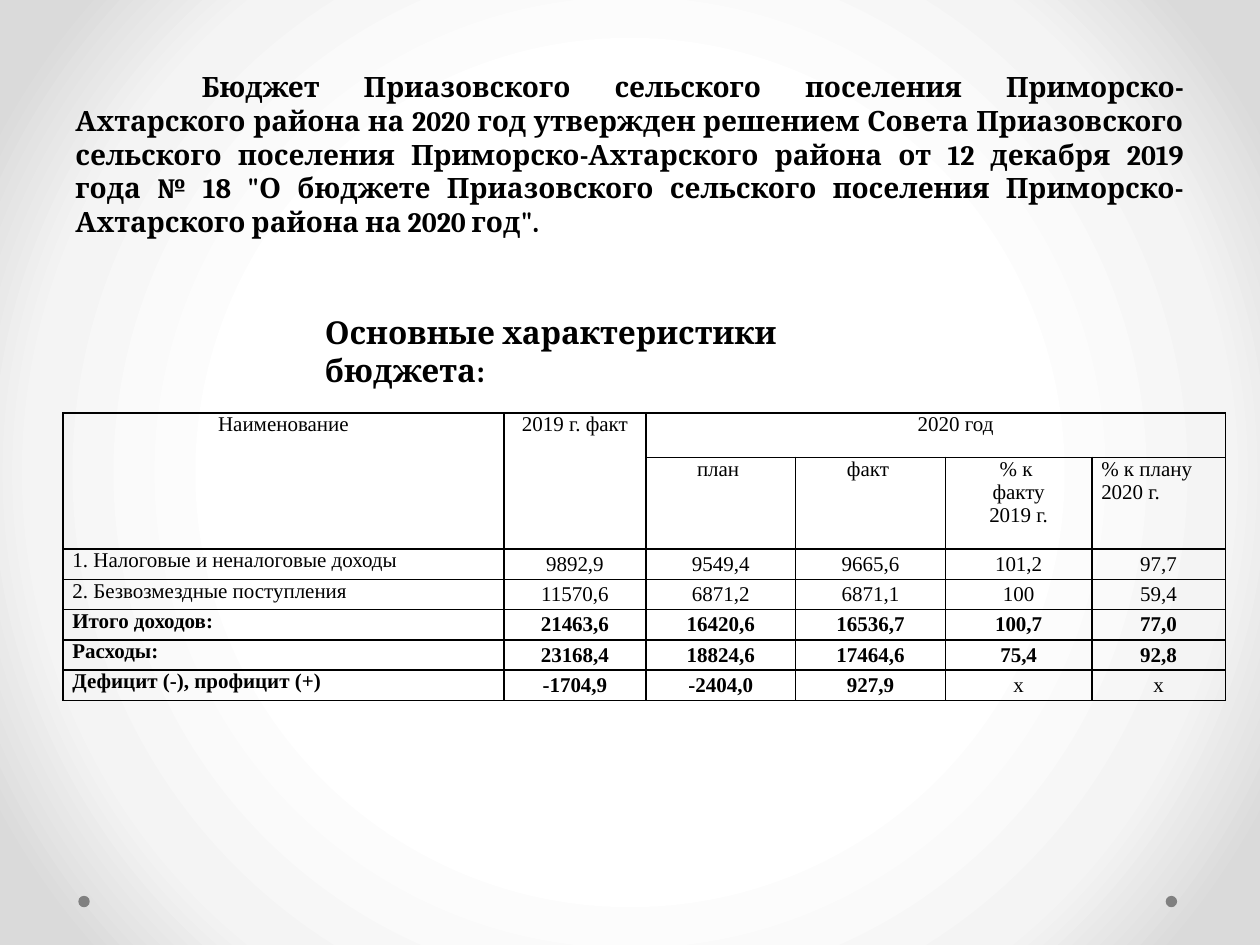
import pptx
import pptx.dml.color
import pptx.enum.shapes
import pptx.enum.text
import pptx.oxml
import pptx.oxml.ns
import pptx.util

Cm, Pt = pptx.util.Cm, pptx.util.Pt
RGBColor = pptx.dml.color.RGBColor
ALIGN = pptx.enum.text.PP_ALIGN
ANCHOR = pptx.enum.text.MSO_ANCHOR

BLACK = RGBColor(0x00, 0x00, 0x00)
GRAY = RGBColor(0x80, 0x80, 0x80)
BACKGROUND_STOPS = [
    (50, RGBColor(0xFF, 0xFF, 0xFF)),
    (76, RGBColor(0xF4, 0xF4, 0xF4)),
    (92, RGBColor(0xDA, 0xDA, 0xDA)),
]

TITLE = (
    "Бюджет Приазовского сельского поселения Приморско-Ахтарского района "
    "на 2020 год утвержден решением Совета Приазовского сельского поселения "
    "Приморско-Ахтарского района от 12 декабря 2019 года № 18 \"О бюджете "
    "Приазовского сельского поселения Приморско-Ахтарского района на 2020 год\"."
)
HEADING = "Основные характеристики бюджета:"
COLUMNS = [8.89, 2.86, 3.02, 3.02, 2.95, 2.69]
ROWS = [0.89, 1.85] + [0.61] * 5
TOP_HEADERS = ["Наименование", "2019 г. факт", "2020 год"]
SUB_HEADERS = [["план "], ["факт "], ["% к ", "факту", "2019 г."], ["% к плану", "2020 г."]]
BODY = [
    ["1. Налоговые и неналоговые доходы", "9892,9", "9549,4", "9665,6", "101,2", "97,7"],
    ["2. Безвозмездные поступления", "11570,6", "6871,2", "6871,1", "100", "59,4"],
    ["Итого доходов:", "21463,6", "16420,6", "16536,7", "100,7", "77,0"],
    ["Расходы:", "23168,4", "18824,6", "17464,6", "75,4", "92,8"],
    ["Дефицит (-), профицит (+)", "-1704,9", "-2404,0", "927,9", "х", "х"],
]
FIRST_TOTAL = 2


def add_run(p, text, font, size, bold=False):
    """Append a black run to a paragraph."""
    r = p.add_run()
    r.text = text
    r.font.name = font
    r.font.size = Pt(size)
    r.font.bold = bold
    r.font.color.rgb = BLACK


def set_background(s):
    """Fill the slide with a circular gradient from the centre."""
    stops = "".join(
        f'<a:gs pos="{pos * 1000}"><a:srgbClr val="{color}"/></a:gs>'
        for pos, color in BACKGROUND_STOPS
    )
    bg = pptx.oxml.parse_xml(
        f'<p:bg {pptx.oxml.ns.nsdecls("p", "a")}><p:bgPr><a:gradFill>'
        f'<a:gsLst>{stops}</a:gsLst><a:path path="circle">'
        '<a:fillToRect l="50000" t="50000" r="50000" b="50000"/></a:path>'
        "</a:gradFill><a:effectLst/></p:bgPr></p:bg>"
    )
    s.element.cSld.insert(0, bg)


def add_corner_dots(s, left, top, width, size):
    """Place a dot at each end of the given strip."""
    for x in (left, left + width - size):
        sp = s.shapes.add_shape(
            pptx.enum.shapes.MSO_SHAPE.OVAL, Cm(x), Cm(top), Cm(size), Cm(size)
        )
        sp.shadow.inherit = False
        sp.fill.solid()
        sp.fill.fore_color.rgb = GRAY
        sp.line.fill.background()


def add_text(s, left, top, width, height, text, size, align, anchor, indent=0):
    """Add a wrapped bold Cambria paragraph with a first-line indent."""
    sp = s.shapes.add_textbox(Cm(left), Cm(top), Cm(width), Cm(height))
    tf = sp.text_frame
    tf.word_wrap = True
    tf.vertical_anchor = anchor
    p = tf.paragraphs[0]
    p.alignment = align
    p._p.get_or_add_pPr().set("indent", str(Cm(indent)))
    add_run(p, text, "Cambria", size, True)


def set_borders(cell):
    """Draw thin black lines on all sides of a cell."""
    tc_pr = cell._tc.get_or_add_tcPr()
    for i, side in enumerate("LRTB"):
        tc_pr.insert(i, pptx.oxml.parse_xml(
            f'<a:ln{side} {pptx.oxml.ns.nsdecls("a")} w="{Pt(1)}"><a:solidFill>'
            f'<a:srgbClr val="{BLACK}"/></a:solidFill></a:ln{side}>'
        ))


def fill_cell(cell, lines, align, anchor=ANCHOR.TOP, bold=False):
    """Write one paragraph per line into a cell."""
    cell.vertical_anchor = anchor
    tf = cell.text_frame
    for i, line in enumerate(lines):
        p = tf.add_paragraph() if i else tf.paragraphs[0]
        p.alignment = align
        add_run(p, line, "Times New Roman", 12, bold)


def add_budget_table(s, left, top):
    """Add the budget table with its two-level header."""
    table = s.shapes.add_table(
        len(ROWS), len(COLUMNS), Cm(left), Cm(top), Cm(sum(COLUMNS)), Cm(sum(ROWS))
    ).table
    table.first_row = table.horz_banding = False
    for column, width in zip(table.columns, COLUMNS):
        column.width = Cm(width)
    for row, height in zip(table.rows, ROWS):
        row.height = Cm(height)
    for cell in table.iter_cells():
        cell.margin_left = cell.margin_right = Cm(0.19)
        cell.margin_top = cell.margin_bottom = 0
        cell.fill.background()
        set_borders(cell)

    for c, text in enumerate(TOP_HEADERS):
        cell = table.cell(0, c)
        cell.merge(table.cell(1, c) if c < 2 else table.cell(0, len(COLUMNS) - 1))
        fill_cell(cell, [text], ALIGN.CENTER)
    p_pr = table.cell(0, 2).text_frame.paragraphs[0]._p.get_or_add_pPr()
    p_pr.set("marL", str(Cm(0.81)))
    for c, lines in enumerate(SUB_HEADERS, 2):
        last = c == len(COLUMNS) - 1
        fill_cell(table.cell(1, c), lines, ALIGN.LEFT if last else ALIGN.CENTER)

    for i, (name, *values) in enumerate(BODY):
        bold = i >= FIRST_TOTAL
        align = ALIGN.JUSTIFY if i == len(BODY) - 1 else ALIGN.LEFT
        fill_cell(table.cell(i + 2, 0), [name], align, bold=bold)
        for c, value in enumerate(values, 1):
            fill_cell(table.cell(i + 2, c), [value], ALIGN.CENTER, ANCHOR.MIDDLE,
                      bold and value != "х")


def main():
    """Build and save the budget slide."""
    prs = pptx.Presentation()
    prs.slide_width, prs.slide_height = Cm(25.4), Cm(19.05)
    s = prs.slides.add_slide(prs.slide_layouts[6])
    set_background(s)
    add_corner_dots(s, 1.58, 18.06, 22.15, 0.23)
    add_text(s, 1.27, 0, 22.86, 4.92, TITLE, 16, ALIGN.JUSTIFY, ANCHOR.BOTTOM, 2.54)
    add_text(s, 6.3, 6.19, 12.42, 1.02, HEADING, 18, ALIGN.LEFT, ANCHOR.TOP)
    add_budget_table(s, 1.27, 8.33)
    prs.save("out.pptx")


if __name__ == "__main__":
    main()
